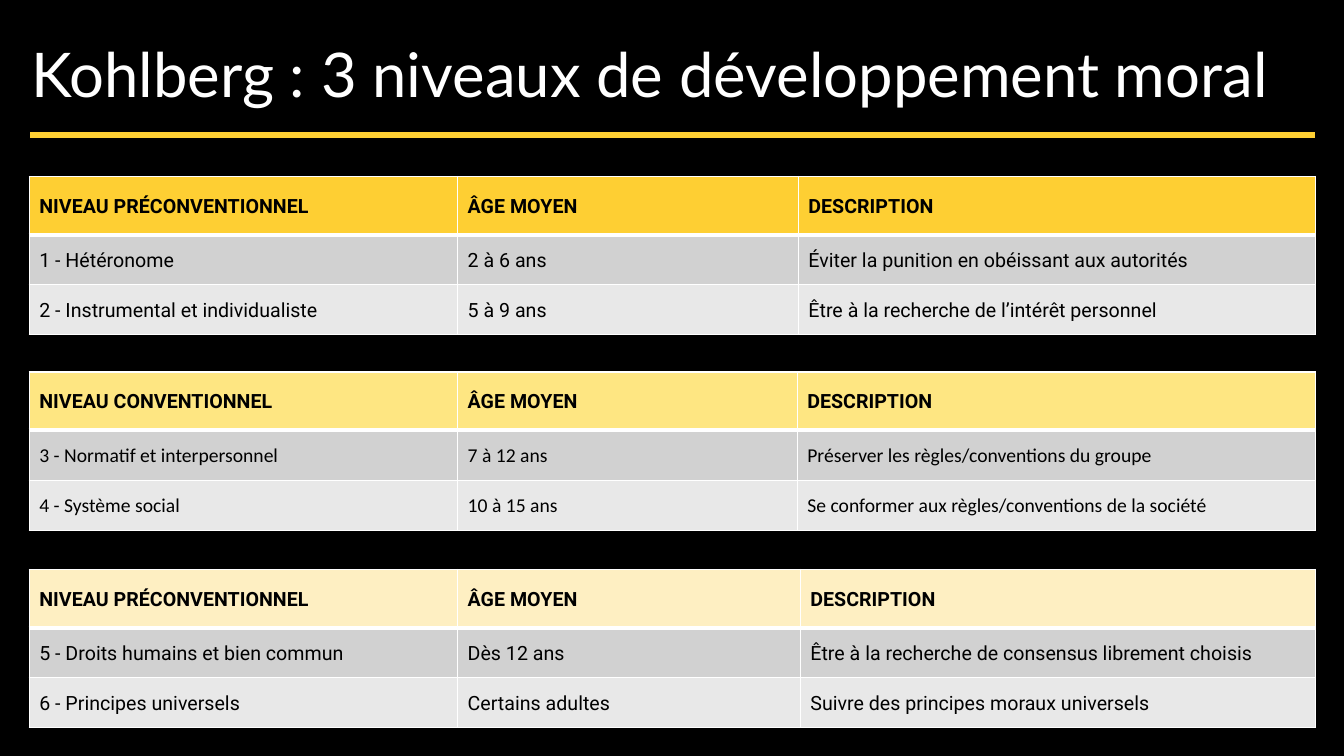
from lxml.etree import SubElement
from pptx import Presentation
from pptx.dml.color import RGBColor
from pptx.enum.shapes import MSO_CONNECTOR
from pptx.enum.text import MSO_ANCHOR, PP_ALIGN
from pptx.oxml.ns import qn
from pptx.util import Pt

TITLE = "Kohlberg : 3 niveaux de développement moral"
LEVELS = [
    dict(name="NIVEAU PRÉCONVENTIONNEL", top=126, age_width=243.4, color="gold", font="Roboto", stages=[
        ("1 - Hétéronome", "2 à 6 ans", "Éviter la punition en obéissant aux autorités"),
        ("2 - Instrumental et individualiste", "5 à 9 ans", "Être à la recherche de l’intérêt personnel")]),
    dict(name="NIVEAU CONVENTIONNEL", top=265.7, age_width=242.6, color="yellow", font="Calibri", stages=[
        ("3 - Normatif et interpersonnel", "7 à 12 ans", "Préserver les règles/conventions du groupe"),
        ("4 - Système social", "10 à 15 ans", "Se conformer aux règles/conventions de la société")]),
    dict(name="NIVEAU PRÉCONVENTIONNEL", top=406.8, age_width=244.8, color="cream", font="Roboto", stages=[
        ("5 - Droits humains et bien commun", "Dès 12 ans", "Être à la recherche de consensus librement choisis"),
        ("6 - Principes universels", "Certains adultes", "Suivre des principes moraux universels")]),
]
COLORS = {"black": "000000", "white": "FFFFFF", "gold": "FECF33", "yellow": "FEE682",
          "cream": "FEEFC2", "dark": "D1D1D1", "light": "E8E8E8"}
LEFT, WIDTH, STAGE_WIDTH = 20.9, 918.7, 306
ROW_HEIGHTS = (41.7, 35.7, 35.7)


def rgb(name):
    return RGBColor.from_string(COLORS[name])


def add_run(p, text, font, size, color, bold=False):
    r = p.add_run()
    r.text = text
    r.font.name, r.font.size, r.font.bold = font, Pt(size), bold
    r.font.color.rgb = rgb(color)


def set_borders(cell, top, bottom):
    tcPr = cell._tc.get_or_add_tcPr()
    sides = (("a:lnL", 1), ("a:lnR", 1), ("a:lnT", top), ("a:lnB", bottom))
    for i, (tag, width) in enumerate(sides):
        ln = SubElement(tcPr, qn(tag), w=str(Pt(width)))
        SubElement(SubElement(ln, qn("a:solidFill")), qn("a:srgbClr"), val=COLORS["white"])
        tcPr.insert(i, ln)


def add_level(s, level):
    rows = [(level["name"], "ÂGE MOYEN", "DESCRIPTION")] + level["stages"]
    widths = (STAGE_WIDTH, level["age_width"], WIDTH - STAGE_WIDTH - level["age_width"])
    table = s.shapes.add_table(len(rows), len(widths), Pt(LEFT), Pt(level["top"]),
                               Pt(WIDTH), Pt(sum(ROW_HEIGHTS))).table
    for col, width in zip(table.columns, widths):
        col.width = Pt(width)
    fills = (level["color"], "dark", "light")
    for i, texts in enumerate(rows):
        table.rows[i].height = Pt(ROW_HEIGHTS[i])
        header = i == 0
        for j, text in enumerate(texts):
            cell = table.cell(i, j)
            cell.vertical_anchor = MSO_ANCHOR.MIDDLE
            cell.fill.solid()
            cell.fill.fore_color.rgb = rgb(fills[i])
            set_borders(cell, 3 if i == 1 else 1, 3 if header else 1)
            p = cell.text_frame.paragraphs[0]
            p.alignment = PP_ALIGN.JUSTIFY if header else PP_ALIGN.LEFT
            p.line_spacing, p.space_after = 1.07, Pt(8)
            add_run(p, text, "Roboto" if header else level["font"], 14, "black", header)


def main():
    """Build the slide on the three levels of moral development."""
    prs = Presentation()
    prs.slide_width, prs.slide_height = Pt(960), Pt(540)
    s = prs.slides.add_slide(prs.slide_layouts[6])
    s.background.fill.solid()
    s.background.fill.fore_color.rgb = rgb("black")

    for level in LEVELS:
        add_level(s, level)

    rule = s.shapes.add_connector(MSO_CONNECTOR.STRAIGHT, Pt(21.6), Pt(96.5), Pt(939.6), Pt(96.5))
    rule.line.color.rgb = rgb("gold")
    rule.line.width = Pt(4.5)
    SubElement(rule._element.spPr, qn("a:effectLst"))

    tf = s.shapes.add_textbox(Pt(15.1), Pt(20.2), Pt(924.5), Pt(63.4)).text_frame
    tf.word_wrap = True
    tf.vertical_anchor = MSO_ANCHOR.MIDDLE
    add_run(tf.paragraphs[0], TITLE, "Lato", 44, "white")
    prs.save("out.pptx")


if __name__ == "__main__":
    main()
